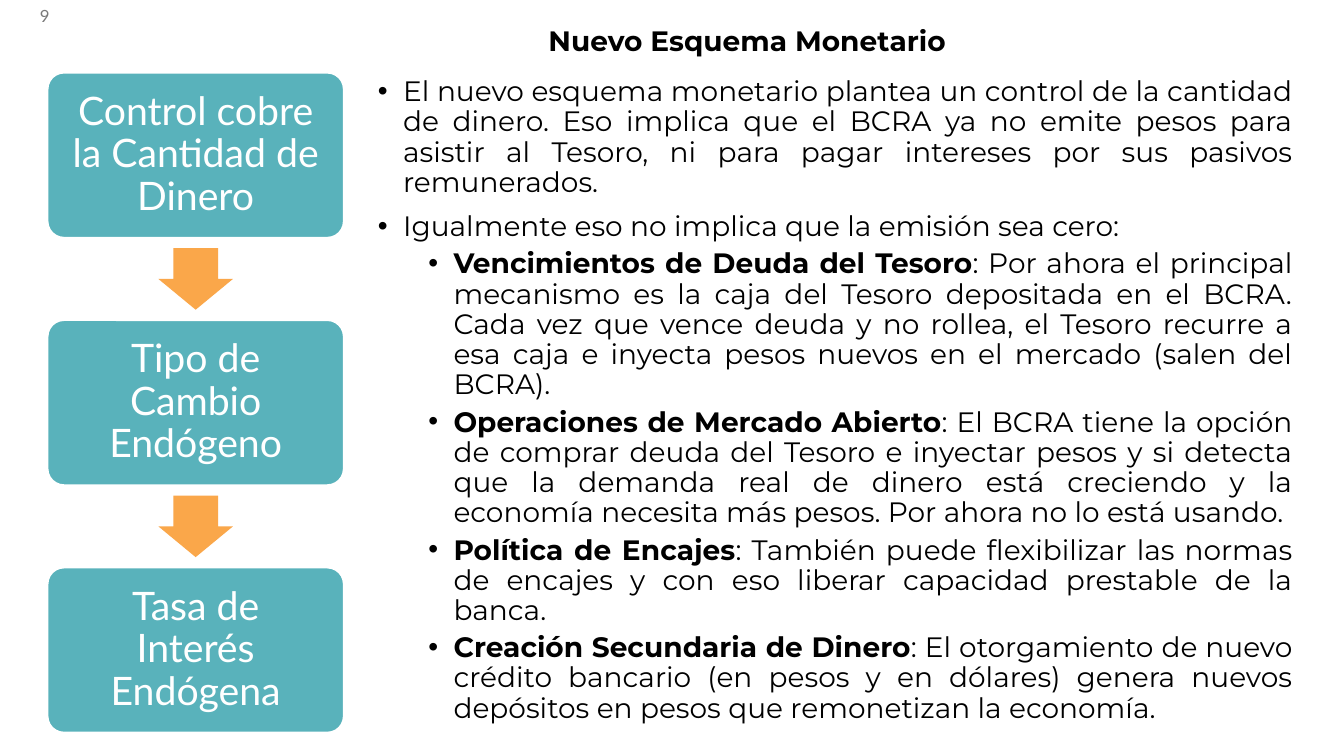
import dataclasses
import itertools

import pptx
import pptx.dml.color
import pptx.enum.shapes
import pptx.enum.text
import pptx.oxml.ns
import pptx.util
from lxml import etree

ALIGN = pptx.enum.text.PP_ALIGN
ANCHOR = pptx.enum.text.MSO_ANCHOR
SHAPE = pptx.enum.shapes.MSO_SHAPE

SLIDE_W = pptx.util.Inches(13.33)
SLIDE_H = pptx.util.Inches(7.5)
TEAL, ORANGE, WHITE, BLACK, GREY = "59B2BB", "FAA74A", "FFFFFF", "000000", "797979"


@dataclasses.dataclass(frozen=True)
class Box:
    """Left, top, width and height in percent of the slide's size."""
    left: float
    top: float
    width: float
    height: float

    def emu(self) -> tuple[int, int, int, int]:
        return (int(SLIDE_W * self.left / 100), int(SLIDE_H * self.top / 100),
                int(SLIDE_W * self.width / 100), int(SLIDE_H * self.height / 100))


@dataclasses.dataclass(frozen=True)
class Point:
    text: str
    heading: str = ""
    level: int = 0


TITLE_BOX = Box(25.06, 1.6, 61.07, 8.13)
NUMBER_BOX = Box(0, -0.53, 4.43, 5.33)
BODY_BOX = Box(27.38, 9.6, 69.54, 88.8)
FIRST_CARD = Box(3.53, 9.6, 22.06, 21.87)
CARD_PITCH = 32.73
ARROW_W, ARROW_H = 5.55, 8.13

CARDS = [
    "Control cobre la Cantidad de Dinero",
    "Tipo de Cambio Endógeno",
    "Tasa de Interés Endógena",
]

POINTS = [
    Point("El nuevo esquema monetario plantea un control de la cantidad de dinero. "
          "Eso implica que el BCRA ya no emite pesos para asistir al Tesoro, ni para "
          "pagar intereses por sus pasivos remunerados."),
    Point("Igualmente eso no implica que la emisión sea cero:"),
    Point(": Por ahora el principal mecanismo es la caja del Tesoro depositada en el "
          "BCRA. Cada vez que vence deuda y no rollea, el Tesoro recurre a esa caja e "
          "inyecta pesos nuevos en el mercado (salen del BCRA).",
          "Vencimientos de Deuda del Tesoro", 1),
    Point(": El BCRA tiene la opción de comprar deuda del Tesoro e inyectar pesos y si "
          "detecta que la demanda real de dinero está creciendo y la economía necesita "
          "más pesos. Por ahora no lo está usando.",
          "Operaciones de Mercado Abierto", 1),
    Point(": También puede flexibilizar las normas de encajes y con eso liberar "
          "capacidad prestable de la banca.",
          "Política de Encajes", 1),
    Point(": El otorgamiento de nuevo crédito bancario (en pesos y en dólares) genera "
          "nuevos depósitos en pesos que remonetizan la economía.",
          "Creación Secundaria de Dinero", 1),
]


def color(value: str) -> pptx.dml.color.RGBColor:
    return pptx.dml.color.RGBColor.from_string(value)


def add_run(p, text: str, font: str, size: float, ink: str, bold: bool = False) -> None:
    r = p.add_run()
    r.text = text
    r.font.name = font
    r.font.size = pptx.util.Pt(size)
    r.font.bold = bold
    r.font.color.rgb = color(ink)


def set_frame(tf, anchor) -> None:
    tf.word_wrap = True
    tf.auto_size = pptx.enum.text.MSO_AUTO_SIZE.NONE
    tf.vertical_anchor = anchor


def set_bullet(p, indent: float) -> None:
    pPr = p._p.get_or_add_pPr()
    pPr.set("marL", str(pptx.util.Inches(indent)))
    pPr.set("indent", str(pptx.util.Inches(-0.25)))
    etree.SubElement(pPr, pptx.oxml.ns.qn("a:buFont"), typeface="Arial")
    etree.SubElement(pPr, pptx.oxml.ns.qn("a:buChar"), char="•")


def add_title(s) -> None:
    sp = s.shapes.title
    sp.left, sp.top, sp.width, sp.height = TITLE_BOX.emu()
    set_frame(sp.text_frame, ANCHOR.MIDDLE)
    p = sp.text_frame.paragraphs[0]
    p.alignment = ALIGN.CENTER
    p.line_spacing = 0.9
    add_run(p, "Nuevo Esquema Monetario", "Montserrat", 20, BLACK, True)


def add_filled(s, kind, box: Box, fill: str, adjustments: list[float]):
    sp = s.shapes.add_shape(kind, *box.emu())
    sp.shadow.inherit = False
    sp.fill.solid()
    sp.fill.fore_color.rgb = color(fill)
    sp.line.fill.background()
    for i, value in enumerate(adjustments):
        sp.adjustments[i] = value
    return sp


def add_card(s, box: Box, text: str) -> None:
    sp = add_filled(s, SHAPE.ROUNDED_RECTANGLE, box, TEAL, [0.1])
    sp.line.color.rgb = color(WHITE)
    sp.line.width = pptx.util.Pt(1.5)
    tf = sp.text_frame
    set_frame(tf, ANCHOR.MIDDLE)
    tf.margin_left = tf.margin_right = pptx.util.Inches(0.16)
    tf.margin_top = tf.margin_bottom = pptx.util.Inches(0.16)
    p = tf.paragraphs[0]
    p.alignment = ALIGN.CENTER
    p.line_spacing = 0.9
    add_run(p, text, "Lato", 28, WHITE)


def add_flow(s) -> None:
    """Stack the cards, with an arrow centred in each gap between two."""
    boxes = [dataclasses.replace(FIRST_CARD, top=FIRST_CARD.top + i * CARD_PITCH)
             for i in range(len(CARDS))]
    for box, text in zip(boxes, CARDS):
        add_card(s, box, text)
    for upper, lower in itertools.pairwise(boxes):
        middle = (upper.top + upper.height + lower.top) / 2
        arrow = Box(upper.left + (upper.width - ARROW_W) / 2, middle - ARROW_H / 2,
                    ARROW_W, ARROW_H)
        add_filled(s, SHAPE.DOWN_ARROW, arrow, ORANGE, [0.6, 0.5])


def add_number(s) -> None:
    tf = s.shapes.add_textbox(*NUMBER_BOX.emu()).text_frame
    set_frame(tf, ANCHOR.MIDDLE)
    p = tf.paragraphs[0]
    p.alignment = ALIGN.RIGHT
    add_run(p, "9", "Lato", 12, GREY)


def add_body(s) -> None:
    tf = s.shapes.add_textbox(*BODY_BOX.emu()).text_frame
    set_frame(tf, ANCHOR.TOP)
    for i, point in enumerate(POINTS):
        p = tf.add_paragraph() if i else tf.paragraphs[0]
        p.level = point.level
        p.alignment = ALIGN.JUSTIFY
        p.line_spacing = 0.9
        if i:
            p.space_before = pptx.util.Pt(5 if point.level else 10)
        set_bullet(p, 0.25 + 0.5 * point.level)
        if point.heading:
            add_run(p, point.heading, "Montserrat", 20, BLACK, True)
        add_run(p, point.text, "Montserrat", 20, BLACK)


def main() -> None:
    prs = pptx.Presentation()
    prs.slide_width, prs.slide_height = SLIDE_W, SLIDE_H
    s = prs.slides.add_slide(prs.slide_layouts[5])
    add_title(s)
    add_flow(s)
    add_number(s)
    add_body(s)
    prs.save("out.pptx")


if __name__ == "__main__":
    main()
